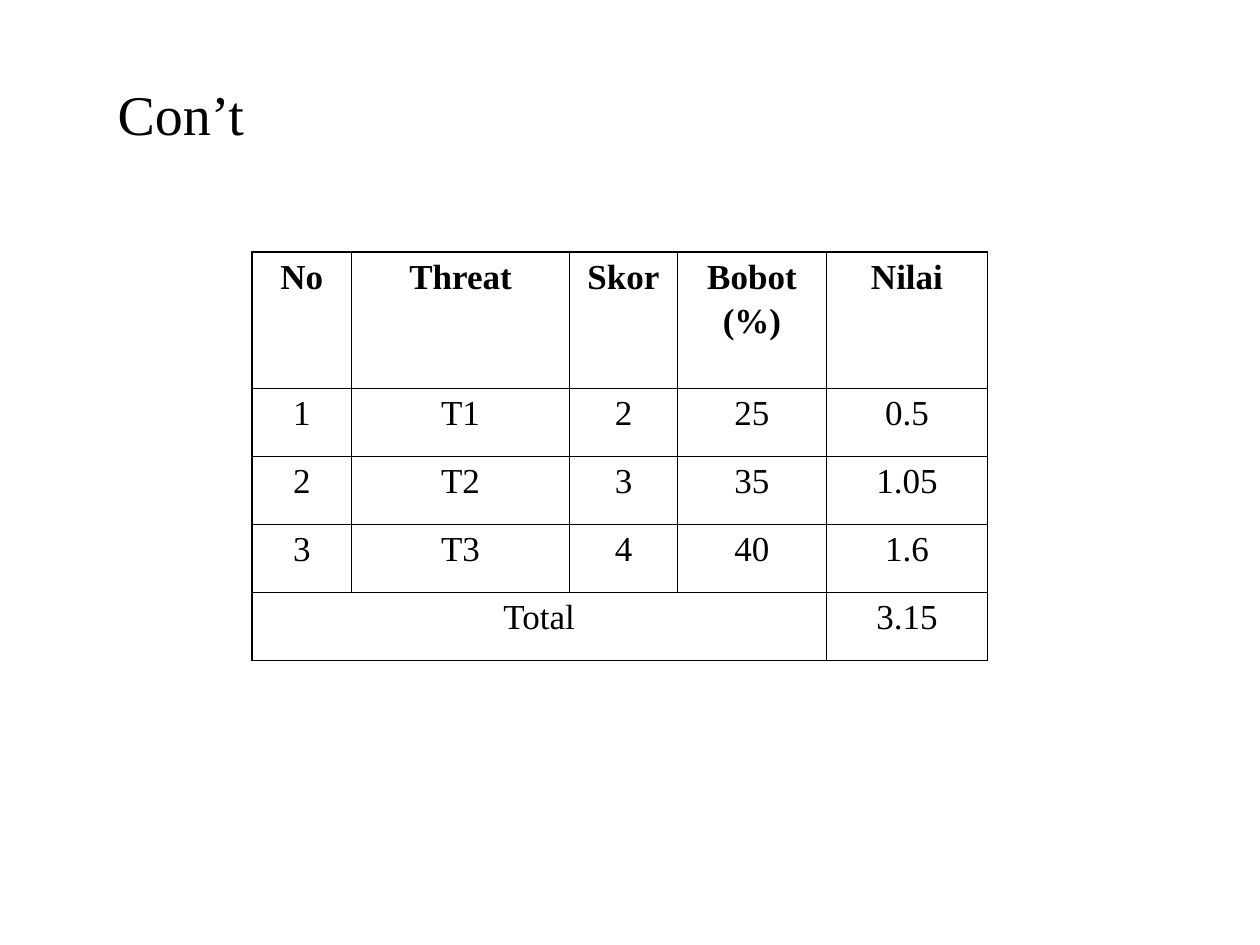
from lxml import etree
from pptx import Presentation
from pptx.dml.color import RGBColor
from pptx.enum.text import MSO_AUTO_SIZE, PP_ALIGN
from pptx.oxml.ns import qn
from pptx.util import Cm, Pt


def add_text(paragraph, text, size, color="000000", bold=False):
    run = paragraph.add_run()
    run.text = text
    run.font.name = "Times New Roman"
    run.font.size = Pt(size)
    run.font.bold = bold
    run.font.color.rgb = RGBColor.from_string(color)


def add_borders(cell, color="000000"):
    properties = cell._tc.get_or_add_tcPr()
    for position, side in enumerate(("a:lnL", "a:lnR", "a:lnT", "a:lnB")):
        line = etree.Element(qn(side), w=str(Pt(1)))
        fill = etree.SubElement(line, qn("a:solidFill"))
        etree.SubElement(fill, qn("a:srgbClr"), val=color)
        properties.insert(position, line)


presentation = Presentation()
presentation.slide_width = Cm(25.4)
presentation.slide_height = Cm(19.05)
slide = presentation.slides.add_slide(presentation.slide_layouts[6])

# Threat score table
rows = [
    ["No", "Threat", "Skor", "Bobot (%)", "Nilai"],
    ["1", "T1", "2", "25", "0.5"],
    ["2", "T2", "3", "35", "1.05"],
    ["3", "T3", "4", "40", "1.6"],
    ["Total", "", "", "", "3.15"],
]
column_widths = [2.01, 4.39, 2.18, 3, 3.25]
row_heights = [2.75] + [1.37] * 4
table_shape = slide.shapes.add_table(
    len(rows), len(column_widths), Cm(5.08), Cm(5.08),
    Cm(sum(column_widths)), Cm(sum(row_heights)))
table = table_shape.table
table.first_row = False
table.horz_banding = False
for column, width in zip(table.columns, column_widths):
    column.width = Cm(width)
for row, height in zip(table.rows, row_heights):
    row.height = Cm(height)

# The total label spans every column but the last
table.cell(4, 0).merge(table.cell(4, 3))

for row_index, values in enumerate(rows):
    for column_index, value in enumerate(values):
        cell = table.cell(row_index, column_index)
        cell.fill.background()
        add_borders(cell)
        cell.margin_left = cell.margin_right = Cm(0.19)
        cell.margin_top = cell.margin_bottom = 0
        if value:
            paragraph = cell.text_frame.paragraphs[0]
            paragraph.alignment = PP_ALIGN.CENTER
            paragraph.line_spacing = 1.15
            add_text(paragraph, value, 20, bold=row_index == 0)

# Title
title = slide.shapes.add_textbox(Cm(2.12), Cm(1.48), Cm(6.15), Cm(1.62))
title.text_frame.word_wrap = True
title.text_frame.auto_size = MSO_AUTO_SIZE.SHAPE_TO_FIT_TEXT
add_text(title.text_frame.paragraphs[0], "Con’t", 32)

presentation.save("out.pptx")
